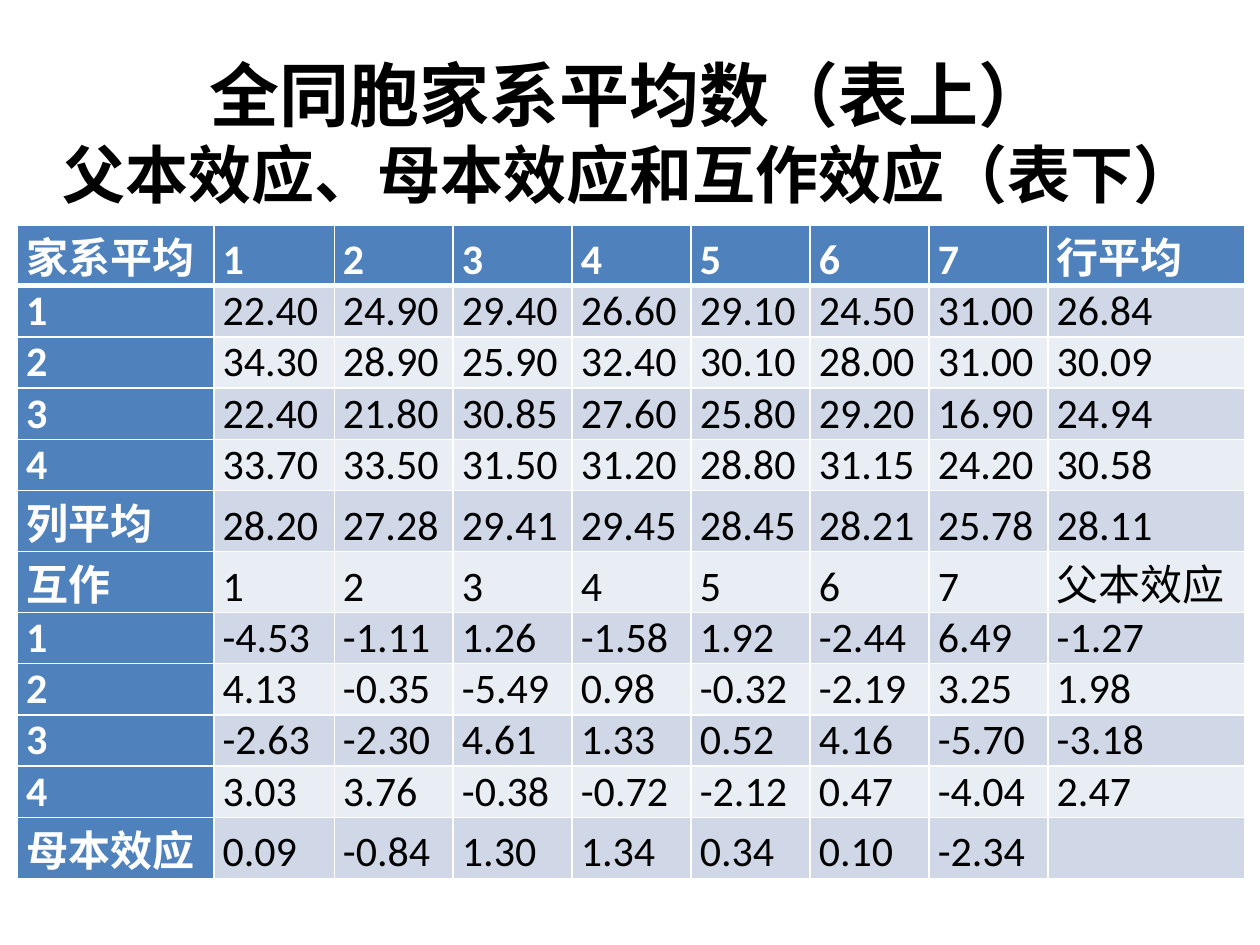
from dataclasses import dataclass

from lxml import etree
from pptx import Presentation
from pptx.dml.color import RGBColor
from pptx.enum.text import MSO_ANCHOR, PP_ALIGN
from pptx.oxml.ns import qn
from pptx.util import Pt

MIDDLE = MSO_ANCHOR.MIDDLE
BOTTOM = MSO_ANCHOR.BOTTOM
CENTER = PP_ALIGN.CENTER
BLANK_LAYOUT = 6


@dataclass(frozen=True)
class Theme:
    title_font: str = "Times New Roman"
    table_font: str = "Calibri"
    title_sizes: tuple = (40, 36)
    table_size: int = 24
    text: str = "000000"
    light: str = "FFFFFF"
    heading: str = "4F81BD"
    bands: tuple = ("E9EDF4", "D0D8E8")
    border: float = 1
    heading_border: float = 3
    cell_margin: float = 5


TITLE_LINES = ("全同胞家系平均数（表上）", "父本效应、母本效应和互作效应（表下）")

ROWS = [line.split(",") for line in """\
家系平均,1,2,3,4,5,6,7,行平均
1,22.40,24.90,29.40,26.60,29.10,24.50,31.00,26.84
2,34.30,28.90,25.90,32.40,30.10,28.00,31.00,30.09
3,22.40,21.80,30.85,27.60,25.80,29.20,16.90,24.94
4,33.70,33.50,31.50,31.20,28.80,31.15,24.20,30.58
列平均,28.20,27.28,29.41,29.45,28.45,28.21,25.78,28.11
互作,1,2,3,4,5,6,7,父本效应
1,-4.53,-1.11,1.26,-1.58,1.92,-2.44,6.49,-1.27
2,4.13,-0.35,-5.49,0.98,-0.32,-2.19,3.25,1.98
3,-2.63,-2.30,4.61,1.33,0.52,4.16,-5.70,-3.18
4,3.03,3.76,-0.38,-0.72,-2.12,0.47,-4.04,2.47
母本效应,0.09,-0.84,1.30,1.34,0.34,0.10,-2.34,""".splitlines()]

COLUMN_WIDTHS = [112.2, 68.8] + [68] * 6 + [112.2]
NUMBER_ROW_HEIGHT = 29.3
LABEL_ROW_HEIGHT = 34.8


class SlideBuilder:
    def __init__(self, slide, theme):
        self.slide = slide
        self.theme = theme

    def style_font(self, font, name, color, bold):
        font.name = name
        font.bold = bold
        font.color.rgb = RGBColor.from_string(color)

    def add_title(self, lines, left, top, width, height):
        theme = self.theme
        shape = self.slide.shapes.add_textbox(Pt(left), Pt(top), Pt(width), Pt(height))
        frame = shape.text_frame
        frame.word_wrap = True
        frame.vertical_anchor = MIDDLE
        paragraph = frame.paragraphs[0]
        paragraph.alignment = CENTER
        self.style_font(paragraph.font, theme.title_font, theme.text, True)
        for index, (line, size) in enumerate(zip(lines, theme.title_sizes)):
            if index:
                paragraph.add_line_break()
            run = paragraph.add_run()
            run.text = line
            run.font.size = Pt(size)

    def add_table(self, rows, widths, left, top):
        heights = [NUMBER_ROW_HEIGHT if row[0].isdigit() else LABEL_ROW_HEIGHT
                   for row in rows]
        table = self.slide.shapes.add_table(
            len(rows), len(widths), Pt(left), Pt(top),
            Pt(sum(widths)), Pt(sum(heights))).table
        table.first_col = True
        for column, width in zip(table.columns, widths):
            column.width = Pt(width)
        for row_index, values in enumerate(rows):
            table.rows[row_index].height = Pt(heights[row_index])
            for column_index, value in enumerate(values):
                self.fill_cell(table.cell(row_index, column_index), value,
                               row_index, column_index)

    def fill_cell(self, cell, value, row_index, column_index):
        theme = self.theme
        is_heading = row_index == 0 or column_index == 0
        cell.margin_left = cell.margin_right = Pt(theme.cell_margin)
        cell.margin_top = cell.margin_bottom = 0
        cell.vertical_anchor = BOTTOM
        self.add_borders(cell, row_index)
        cell.fill.solid()
        cell.fill.fore_color.rgb = RGBColor.from_string(
            theme.heading if is_heading else theme.bands[row_index % 2])
        paragraph = cell.text_frame.paragraphs[0]
        if value:
            paragraph.text = value
        paragraph.font.size = Pt(theme.table_size)
        self.style_font(paragraph.font, theme.table_font,
                        theme.light if is_heading else theme.text, is_heading)

    def add_borders(self, cell, row_index):
        theme = self.theme
        widths = {"lnL": theme.border, "lnR": theme.border,
                  "lnT": theme.heading_border if row_index == 1 else theme.border,
                  "lnB": theme.heading_border if row_index == 0 else theme.border}
        properties = cell._tc.get_or_add_tcPr()
        for side, width in widths.items():
            line = etree.SubElement(properties, qn("a:" + side), w=str(Pt(width)))
            fill = etree.SubElement(line, qn("a:solidFill"))
            etree.SubElement(fill, qn("a:srgbClr"), val=theme.light)


def main():
    presentation = Presentation()
    presentation.slide_width = Pt(720)
    presentation.slide_height = Pt(540)
    slide = presentation.slides.add_slide(presentation.slide_layouts[BLANK_LAYOUT])
    builder = SlideBuilder(slide, Theme())
    builder.add_title(TITLE_LINES, 25, 21, 669, 108)
    builder.add_table(ROWS, COLUMN_WIDTHS, 10, 128.5)
    presentation.save("out.pptx")


if __name__ == "__main__":
    main()
